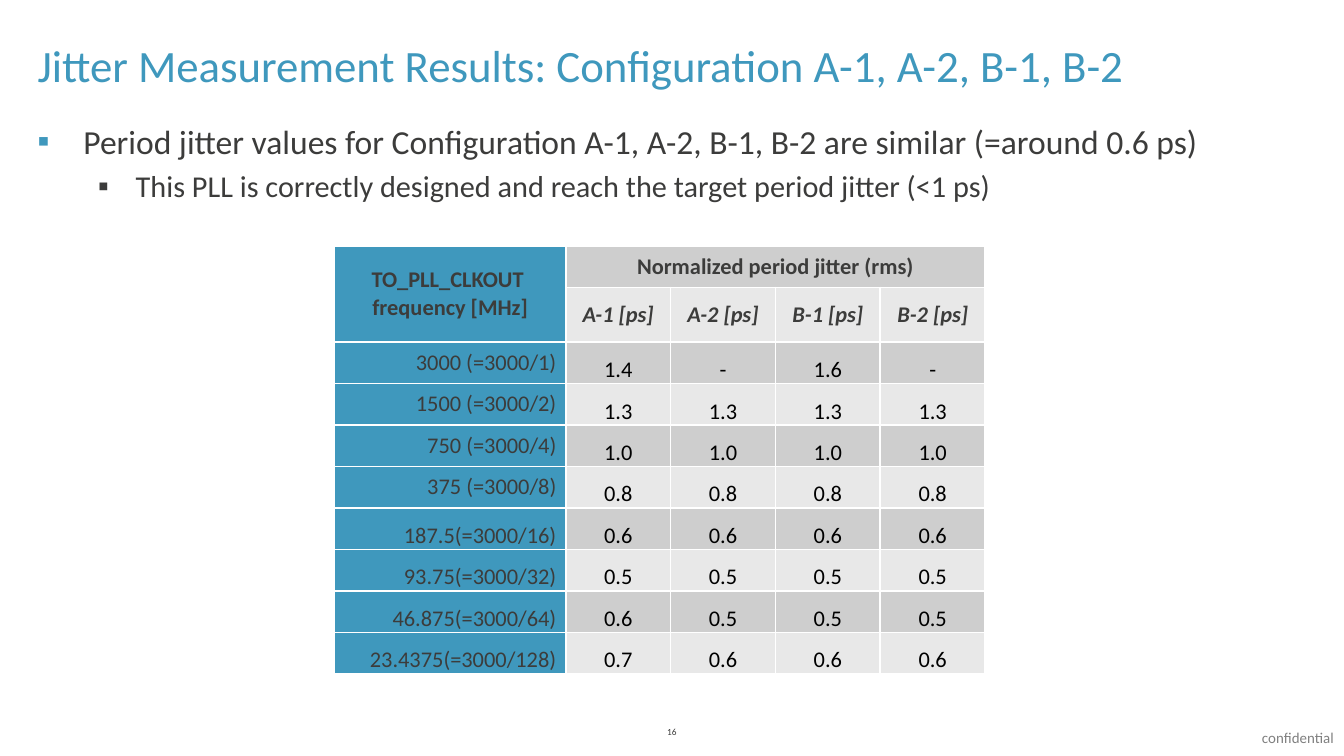
from pptx import Presentation
from pptx.dml.color import RGBColor
from pptx.enum.text import MSO_ANCHOR as Anchor, MSO_AUTO_SIZE as Fit, PP_ALIGN as Align
from pptx.oxml.ns import qn
from pptx.util import Inches, Pt
from lxml.etree import SubElement as Sub

BLUE, INK, BLACK, WHITE, GRAY = "3F98BD", "3C3C3B", "000000", "FFFFFF", "808080"
BANDS = ["CECECE", "E8E8E8"]
HEADS = ["A-1 [ps]", "A-2 [ps]", "B-1 [ps]", "B-2 [ps]"]
ROWS = [
    ("3000 (=3000/1)", "1.4", "-", "1.6", "-"),
    ("1500 (=3000/2)", "1.3", "1.3", "1.3", "1.3"),
    ("750 (=3000/4)", "1.0", "1.0", "1.0", "1.0"),
    ("375 (=3000/8)", "0.8", "0.8", "0.8", "0.8"),
    ("187.5(=3000/16)", "0.6", "0.6", "0.6", "0.6"),
    ("93.75(=3000/32)", "0.5", "0.5", "0.5", "0.5"),
    ("46.875(=3000/64)", "0.6", "0.5", "0.5", "0.5"),
    ("23.4375(=3000/128)", "0.7", "0.6", "0.6", "0.6"),
]


def paint(color, value):
    color.rgb = RGBColor.from_string(value)


def style(para, size, color=INK, align=Align.LEFT, **form):
    para.alignment = align
    form = {"name": "Calibri", "size": Pt(size), **form}
    for key, value in form.items():
        setattr(para.font, key, value)
    paint(para.font.color, color)


def place(shape, left, top, width, height, anchor):
    box = {"left": left, "top": top, "width": width, "height": height}
    for key, value in box.items():
        setattr(shape, key, Inches(value))
    frame = shape.text_frame
    frame.auto_size = Fit.NONE
    frame.vertical_anchor = anchor
    return frame


def bullet(para, color, left, hang):
    props = para._p.get_or_add_pPr()
    props.set("marL", str(Inches(left)))
    props.set("indent", str(-Inches(hang)))
    Sub(Sub(props, qn("a:buClr")), qn("a:srgbClr"), val=color)
    Sub(props, qn("a:buFont"), typeface="Calibri")
    Sub(props, qn("a:buChar"), char="▪")


def add_title(slide):
    frame = place(slide.shapes.title, 0.18, 0.23, 9.57, 0.5, Anchor.BOTTOM)
    frame.text = "Jitter Measurement Results: Configuration A-1, A-2, B-1, B-2"
    style(frame.paragraphs[0], 24, BLUE)


def add_list(slide):
    frame = place(slide.placeholders[1], 0.18, 0.74, 9.57, 0.94, Anchor.MIDDLE)
    frame.text = (
        "Period jitter values for Configuration A-1, A-2, B-1, B-2 are similar (=around 0.6 ps)\n"
        "This PLL is correctly designed and reach the target period jitter (<1 ps)"
    )
    forms = [(18, BLUE, 0.34, 0.34, 0), (16.2, INK, 0.73, 0.28, 3.2)]
    for level, (para, form) in enumerate(zip(frame.paragraphs, forms)):
        size, color, left, hang, gap = form
        para.level = level
        bullet(para, color, left, hang)
        para.space_before = Pt(gap)
        style(para, size)


def add_note(slide, text, box, size, color, align, inset):
    """Add a one-line footer text."""
    note = slide.shapes.add_textbox(0, 0, 0, 0)
    frame = place(note, *box, Anchor.MIDDLE)
    for side in ("left", "top", "right", "bottom"):
        setattr(frame, f"margin_{side}", Inches(inset))
    frame.text = text
    style(frame.paragraphs[0], size, color, align)


def edge(cell):
    """Draw thin white borders on all sides of a cell."""
    props = cell._tc.get_or_add_tcPr()
    for side in ("lnL", "lnR", "lnT", "lnB"):
        line = Sub(props, qn(f"a:{side}"), w=str(Pt(1)))
        Sub(Sub(line, qn("a:solidFill")), qn("a:srgbClr"), val=WHITE)


def set_cell(cell, text, fill, anchor, **form):
    sides = {"left": 0.07, "top": 0, "right": 0.07, "bottom": 0}
    for side, value in sides.items():
        setattr(cell, f"margin_{side}", Inches(value))
    cell.vertical_anchor = anchor
    edge(cell)
    cell.fill.solid()
    paint(cell.fill.fore_color, fill)
    cell.text = text
    for para in cell.text_frame.paragraphs:
        style(para, 12, **form)


def add_grid(slide):
    data = [
        ("TO_PLL_CLKOUT \nfrequency [MHz]", "Normalized period jitter (rms)", "", "", ""),
        ("", *HEADS),
        *ROWS,
    ]
    box = [Inches(n) for n in (2.49, 1.83, 4.83, 3.09)]
    grid = slide.shapes.add_table(len(data), 5, *box).table
    for num, col in enumerate(grid.columns):
        col.width = Inches(0.78 if num else 1.72)
    for r, row in enumerate(data):
        for c, text in enumerate(row):
            head = r < 2
            high = head or (c == 0 and r < 6)
            set_cell(
                grid.cell(r, c), text,
                BANDS[r % 2] if c else BLUE,
                Anchor.MIDDLE if high else Anchor.BOTTOM,
                color=BLACK if c and not head else INK,
                align=Align.CENTER if c or head else Align.RIGHT,
                bold=head, italic=r == 1,
            )
    grid.cell(0, 0).merge(grid.cell(1, 0))
    grid.cell(0, 1).merge(grid.cell(0, 4))


def main():
    deck = Presentation()
    deck.slide_width = Inches(10)
    deck.slide_height = deck.slide_width * 9 // 16
    slide = deck.slides.add_slide(deck.slide_layouts[1])
    add_title(slide)
    add_list(slide)
    add_grid(slide)
    add_note(slide, "16", (4.53, 5.35, 0.94, 0.19), 5, INK, Align.CENTER, 0.05)
    add_note(slide, "confidential", (9.39, 5.42, 0.57, 0.13), 8, GRAY, Align.LEFT, 0)
    deck.save("out.pptx")


if __name__ == "__main__":
    main()
